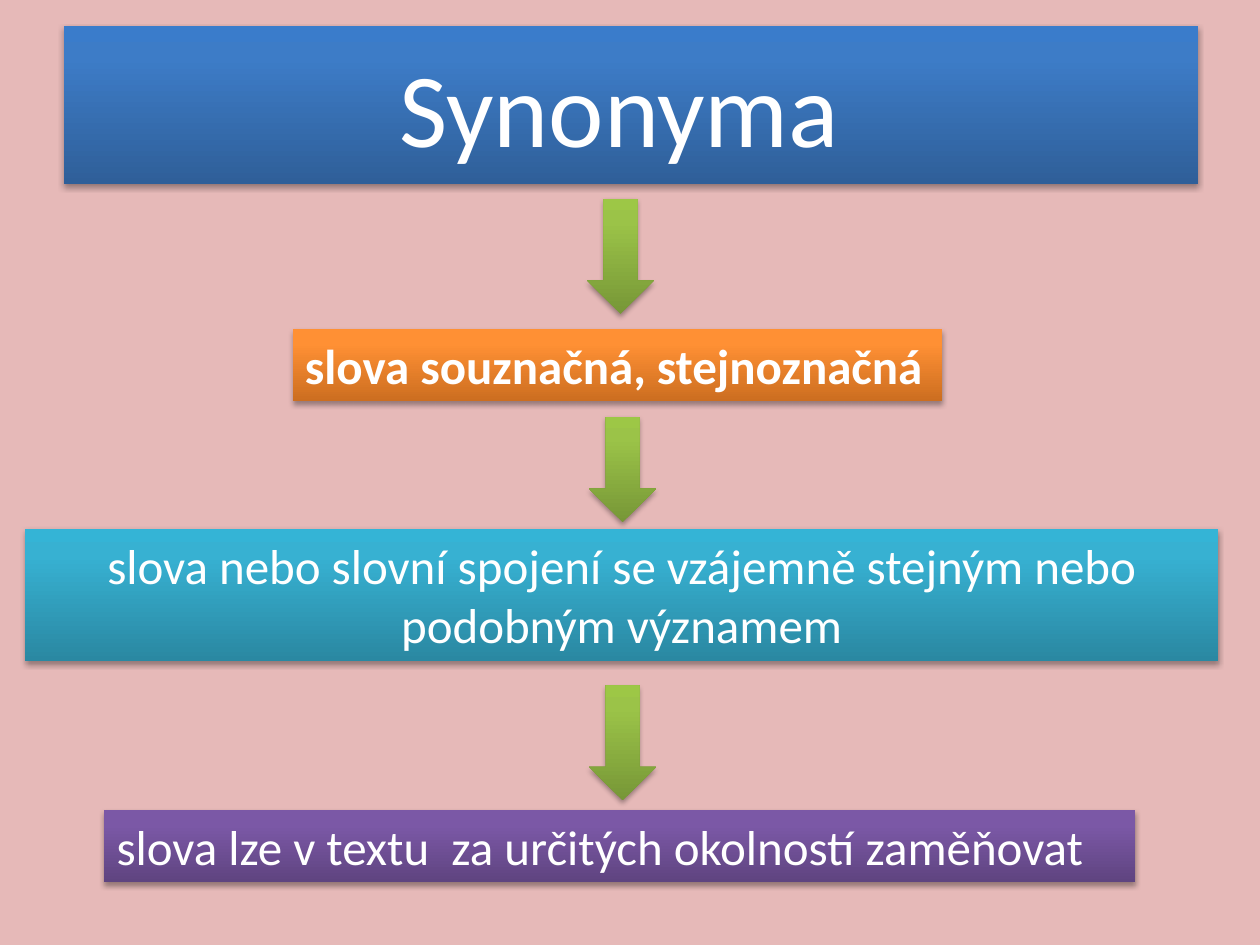
from lxml.etree import SubElement
from pptx import Presentation
from pptx.dml.color import RGBColor
from pptx.enum.shapes import MSO_SHAPE
from pptx.enum.text import MSO_ANCHOR, MSO_AUTO_SIZE, PP_ALIGN
from pptx.oxml.ns import qn
from pptx.util import Pt

COLORS = {"background": "E6B9B8", "text": "FFFFFF", "shadow": "000000"}
# Gradient colours from the bottom edge to the top edge
GRADIENTS = {
    "blue": ("2F5F99", "3D7CC7", "3A7CCB"),
    "green": ("779737", "9BC348", "9DC746"),
    "orange": ("CC6E20", "FF9034", "FF9136"),
    "teal": ("2A88A2", "37B1D2", "34B4D6"),
    "purple": ("5F4480", "7B58A6", "7C57A8"),
}
STOP_POSITIONS = (0, 80000, 100000)
SHADOW = {"blurRad": Pt(3.1), "dist": Pt(1.8), "dir": 90 * 60000, "rotWithShape": 0}

TITLE_FRAME = {"vertical_anchor": MSO_ANCHOR.MIDDLE, "word_wrap": True}
WRAPPED_FRAME = {"vertical_anchor": MSO_ANCHOR.TOP, "word_wrap": True,
                 "auto_size": MSO_AUTO_SIZE.SHAPE_TO_FIT_TEXT}
UNWRAPPED_FRAME = {**WRAPPED_FRAME, "word_wrap": False}

# Box (left, top, width, height), gradient, text, frame, alignment, font
PANELS = [
    ((36.7, 15, 648, 90), "blue", "Synonyma ",
     TITLE_FRAME, PP_ALIGN.CENTER, {"size": Pt(60)}),
    ((167.2, 188, 371.2, 41.2), "orange", "slova souznačná, stejnoznačná",
     UNWRAPPED_FRAME, PP_ALIGN.LEFT, {"size": Pt(28), "bold": True}),
    ((14.2, 302.4, 682, 75.1), "teal",
     "slova nebo slovní spojení se vzájemně stejným nebo podobným významem",
     WRAPPED_FRAME, PP_ALIGN.CENTER, {"size": Pt(28)}),
    ((59.5, 463, 589, 41.2), "purple",
     "slova lze v textu  za určitých okolností zaměňovat",
     WRAPPED_FRAME, PP_ALIGN.LEFT, {"size": Pt(28)}),
]
ARROWS = [(335.4, 113.6, 38.4, 65.8), (336.6, 238.4, 38.4, 60), (336.6, 391.6, 38.4, 65.8)]


def set_attributes(target, values):
    for name, value in values.items():
        setattr(target, name, value)


def add_color(parent, color):
    return SubElement(parent, qn("a:srgbClr"), val=color)


def add_glossy_shape(slide, kind, box, gradient):
    """Add a borderless shape with a vertical gradient and a soft shadow below."""
    shape = slide.shapes.add_shape(kind, *map(Pt, box))
    shape.line.fill.background()
    shape.fill.gradient()
    shape.fill.gradient_angle = 90
    properties = shape.element.spPr
    stops = properties.find(".//" + qn("a:gsLst"))
    stops[:] = []
    for position, color in zip(STOP_POSITIONS, GRADIENTS[gradient]):
        add_color(SubElement(stops, qn("a:gs"), pos=str(position)), color)

    shape.shadow.inherit = False
    effects = properties.find(qn("a:effectLst"))
    shadow = SubElement(effects, qn("a:outerShdw"))
    for name, value in SHADOW.items():
        shadow.set(name, str(value))
    SubElement(add_color(shadow, COLORS["shadow"]), qn("a:alpha"), val="35000")
    return shape


def add_panel(slide, box, gradient, text, frame_format, alignment, font_format):
    shape = add_glossy_shape(slide, MSO_SHAPE.RECTANGLE, box, gradient)
    set_attributes(shape.text_frame, frame_format)
    paragraph = shape.text_frame.paragraphs[0]
    paragraph.alignment = alignment
    run = paragraph.add_run()
    run.text = text
    set_attributes(run.font, {"name": "Calibri", **font_format})
    run.font.color.rgb = RGBColor.from_string(COLORS["text"])


def build_synonyms_slide(presentation):
    slide = presentation.slides.add_slide(presentation.slide_layouts[6])
    slide.background.fill.solid()
    slide.background.fill.fore_color.rgb = RGBColor.from_string(COLORS["background"])
    for panel in PANELS:
        add_panel(slide, *panel)
    for box in ARROWS:
        add_glossy_shape(slide, MSO_SHAPE.DOWN_ARROW, box, "green")


def main():
    presentation = Presentation()
    set_attributes(presentation, {"slide_width": Pt(720), "slide_height": Pt(540)})
    build_synonyms_slide(presentation)
    presentation.save("out.pptx")


if __name__ == "__main__":
    main()
